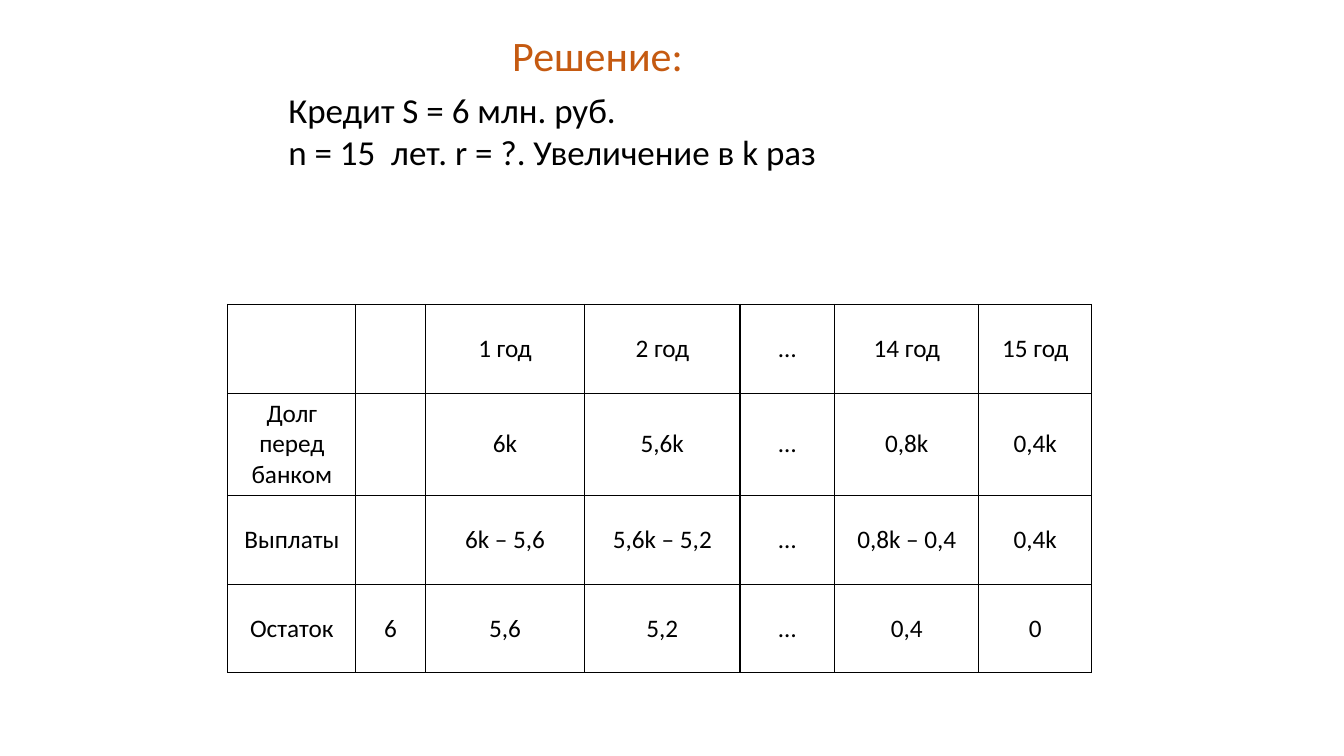
"""Build a slide with the loan conditions and the year-by-year repayment table."""
from dataclasses import dataclass

from lxml import etree
from pptx import Presentation
from pptx.dml.color import RGBColor
from pptx.enum.text import MSO_ANCHOR, MSO_AUTO_SIZE, PP_ALIGN
from pptx.oxml.ns import qn
from pptx.util import Inches, Pt

LEFT, CENTER = PP_ALIGN.LEFT, PP_ALIGN.CENTER
TOP, MIDDLE = MSO_ANCHOR.TOP, MSO_ANCHOR.MIDDLE
NO_AUTOFIT = MSO_AUTO_SIZE.NONE


@dataclass(frozen=True)
class Theme:
    font: str = "Calibri"
    heading: str = "C55A11"
    ink: str = "000000"
    paper: str = "FFFFFF"
    heading_size: int = 30
    body_size: int = 25
    table_size: int = 18
    border_width: int = 1


THEME = Theme()


def write(frame, text, size, color=THEME.ink, align=LEFT):
    frame.text = text
    for paragraph in frame.paragraphs:
        paragraph.alignment = align
        paragraph.space_before = Pt(0)
        for run in paragraph.runs:
            run.font.name = THEME.font
            run.font.size = Pt(size)
            run.font.color.rgb = RGBColor.from_string(color)


def draw_borders(cell):
    properties = cell._tc.get_or_add_tcPr()
    for position, side in enumerate(("a:lnL", "a:lnR", "a:lnT", "a:lnB")):
        line = etree.Element(qn(side), w=str(Pt(THEME.border_width)))
        fill = etree.SubElement(line, qn("a:solidFill"))
        etree.SubElement(fill, qn("a:srgbClr"), val=THEME.ink)
        properties.insert(position, line)


presentation = Presentation()
presentation.slide_width = Inches(13.33)
presentation.slide_height = Inches(7.5)
slide = presentation.slides.add_slide(presentation.slide_layouts[1])

heading, conditions = slide.placeholders
for placeholder, bounds in (
    (heading, (4.98, 0.24, 2.04, 0.61)),
    (conditions, (2.76, 0.83, 7.58, 0.94)),
):
    placeholder.left, placeholder.top, placeholder.width, placeholder.height = map(Inches, bounds)
    placeholder.text_frame.auto_size = NO_AUTOFIT
    placeholder.text_frame.vertical_anchor = TOP

write(heading.text_frame, "Решение:", size=THEME.heading_size, color=THEME.heading)
write(
    conditions.text_frame,
    "Кредит S = 6 млн. руб.\nn = 15  лет. r = ?. Увеличение в k раз",
    size=THEME.body_size,
)
for paragraph in conditions.text_frame.paragraphs:
    properties = paragraph._p.get_or_add_pPr()
    properties.set("marL", "0")
    properties.set("indent", "0")
    etree.SubElement(properties, qn("a:buNone"))

COLUMN_WIDTHS = (1.27, 0.69, 1.58, 1.54, 0.94, 1.43, 1.12)
ROW_HEIGHT = 0.88
REPAYMENTS = (
    ("", "", "1 год", "2 год", "…", "14 год", "15 год"),
    ("Долг перед банком", "", "6k", "5,6k", "…", "0,8k", "0,4k"),
    ("Выплаты", "", "6k – 5,6", "5,6k – 5,2", "…", "0,8k – 0,4", "0,4k"),
    ("Остаток", "6", "5,6", "5,2", "…", "0,4", "0"),
)

schedule = slide.shapes.add_table(
    len(REPAYMENTS), len(COLUMN_WIDTHS),
    Inches(2.26), Inches(3.02),
    Inches(sum(COLUMN_WIDTHS)), Inches(ROW_HEIGHT * len(REPAYMENTS)),
).table
schedule.first_row = False
schedule.horz_banding = False
for column, width in zip(schedule.columns, COLUMN_WIDTHS):
    column.width = Inches(width)

for row, entries in zip(schedule.rows, REPAYMENTS):
    row.height = Inches(ROW_HEIGHT)
    for cell, entry in zip(row.cells, entries):
        cell.fill.solid()
        cell.fill.fore_color.rgb = RGBColor.from_string(THEME.paper)
        cell.vertical_anchor = MIDDLE
        draw_borders(cell)
        if entry:
            write(cell.text_frame, entry, size=THEME.table_size, align=CENTER)

presentation.save("out.pptx")
